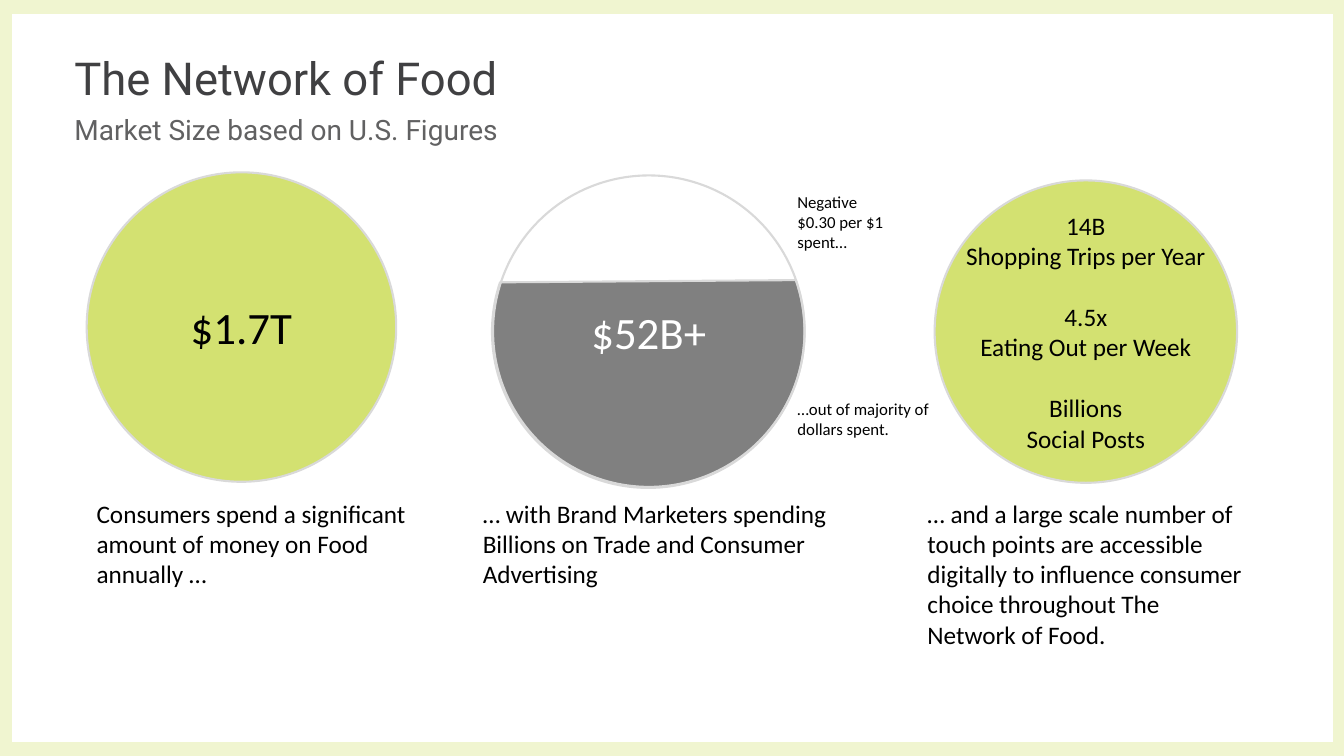
from pptx import Presentation
from pptx.dml.color import RGBColor
from pptx.enum import shapes, text
from pptx.util import Inches, Pt

KINDS = shapes.MSO_SHAPE
LIME, GREY, EDGE, WHITE, BLACK = "D3E171", "808080", "D9D9D9", "FFFFFF", "000000"

deck = Presentation()
deck.slide_width, deck.slide_height = Inches(13.33), Inches(7.5)
slide = deck.slides.add_slide(deck.slide_layouts[6])


def paint(item, color):
    """Give a fill or a line fill one solid colour; None leaves it empty."""
    if color is None:
        item.background()
    else:
        item.solid()
        item.fore_color.rgb = RGBColor.from_string(color)


def write(words, at=None, shape=None, size=18, color=BLACK, face="Calibri",
          align=text.PP_ALIGN.LEFT, anchor=text.MSO_ANCHOR.TOP,
          wrap=True, pad=0.05, gap=0, lead=None):
    """Put text in a shape or a new box; gap goes before each later paragraph,
    and a line break inside a paragraph is a vertical tab."""
    box = shape or slide.shapes.add_textbox(*map(Inches, at))
    frame = box.text_frame
    frame.word_wrap, frame.vertical_anchor = wrap, anchor
    frame.margin_top = frame.margin_bottom = Inches(pad)
    frame.text = words
    for i, para in enumerate(frame.paragraphs):
        para.alignment = align
        para.line_spacing = lead
        para.space_before = Pt(gap if i else 0)
        for run in para.runs:
            run.font.size, run.font.name = Pt(size), face
            run.font.color.rgb = RGBColor.from_string(color)


paint(slide.background.fill, "F0F5D0")

# Panel, part-filled disc and the three circles
discs = []
for kind, at, fill, edge in [
    (KINDS.RECTANGLE, (0.12, 0.14, 13.1, 7.22), WHITE, None),
    (KINDS.CHORD, (4.88, 1.74, 3.1, 3.1), GREY, EDGE),
    (KINDS.OVAL, (0.86, 1.71, 3.07, 3.07), LIME, EDGE),
    (KINDS.OVAL, (4.89, 1.74, 3.09, 3.09), None, EDGE),
    (KINDS.OVAL, (9.27, 1.79, 3, 3), LIME, EDGE),
]:
    disc = slide.shapes.add_shape(kind, *map(Inches, at))
    disc.shadow.inherit = False
    paint(disc.fill, fill)
    paint(disc.line.fill, edge)
    if edge:
        disc.line.width = Pt(1.5)
    discs.append(disc)

panel, chord, sales, spend, trips = discs
chord.rotation = 288.4
chord.adjustments[0], chord.adjustments[1] = 31.39, 162

mid = dict(align=text.PP_ALIGN.CENTER, anchor=text.MSO_ANCHOR.MIDDLE)
write("$1.7T", shape=sales, size=32, **mid)
write("$52B+", shape=spend, size=32, color=WHITE, **mid)
write("14B\vShopping Trips per Year\n4.5x\vEating Out per Week\nBillions\vSocial Posts",
      shape=trips, wrap=False, gap=22, **mid)

# Headings
write("The Network of Food", (0.64, 0.49, 12.06, 0.62), size=32.4, color="404042",
      face="Roboto", anchor=text.MSO_ANCHOR.MIDDLE, lead=0.9)
write("Market Size based on U.S. Figures", (0.64, 1.12, 12.06, 0.46), size=20,
      color="616162", face="Roboto", pad=0)

# Captions below the circles
for left, width, height, words in [
    (0.86, 3.4, 1.01, "Consumers spend a significant amount of money on Food annually …"),
    (4.69, 3.77, 1.01,
     "… with Brand Marketers spending Billions on Trade and Consumer Advertising"),
    (9.1, 3.41, 1.62,
     "… and a large scale number of touch points are accessible digitally "
     "to influence consumer choice throughout The Network of Food."),
]:
    write(words, (left, 4.89, width, height))

# Side notes
write("Negative $0.30 per $1 spent…", (7.81, 1.85, 1.16, 0.71), size=12)
write("…out of majority of dollars spent.", (7.81, 3.91, 1.51, 0.5), size=12)

deck.save("out.pptx")
